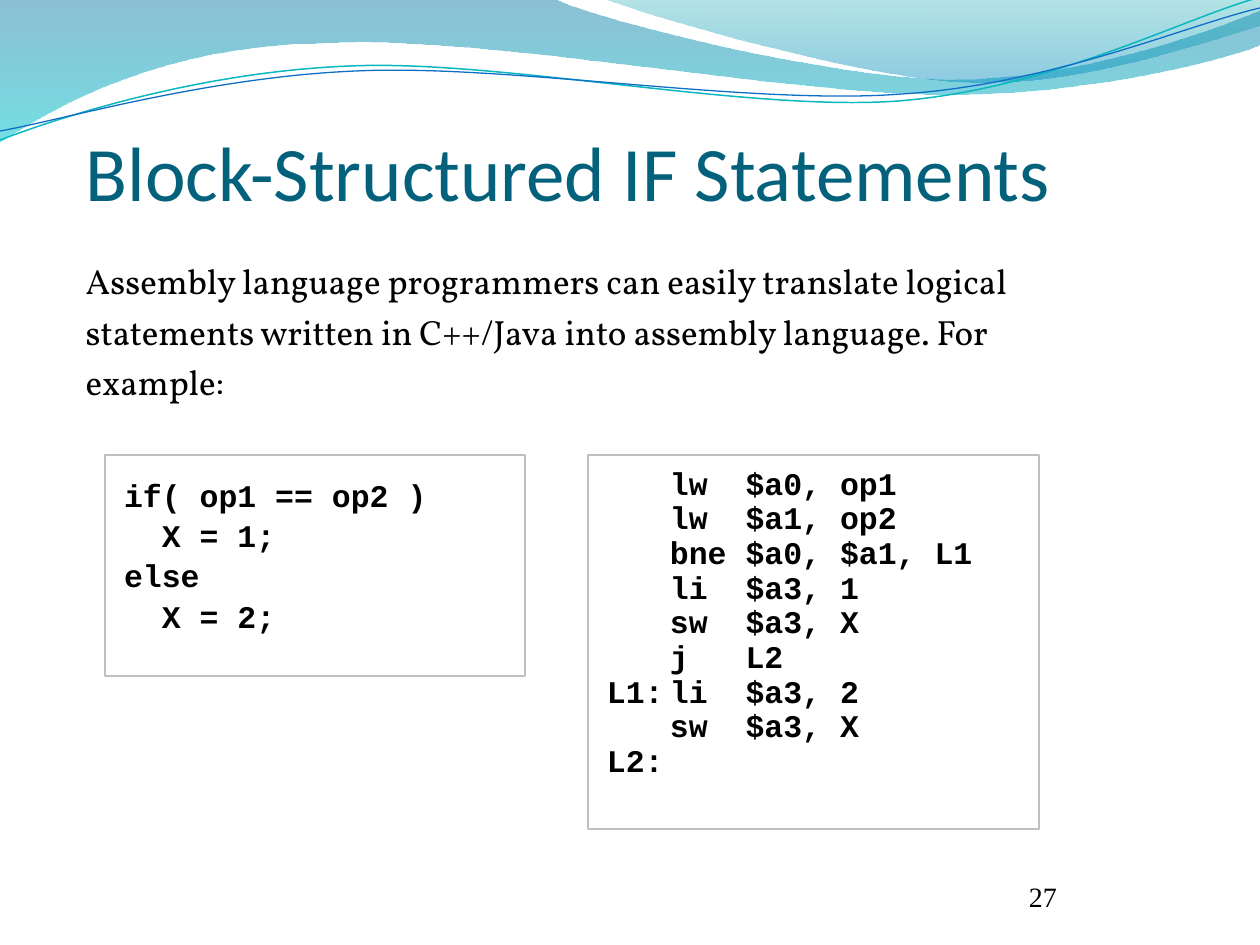
from lxml import etree
from pptx import Presentation
from pptx.dml.color import RGBColor
from pptx.enum.shapes import MSO_SHAPE
from pptx.enum.text import MSO_ANCHOR, MSO_AUTO_SIZE, PP_ALIGN
from pptx.oxml.ns import qn
from pptx.util import Emu, Pt

RECT = MSO_SHAPE.RECTANGLE
TOP, BOTTOM = MSO_ANCHOR.TOP, MSO_ANCHOR.BOTTOM
NO_FIT = MSO_AUTO_SIZE.NONE
LEFT = PP_ALIGN.LEFT

WIDTH, HEIGHT = 1260, 945
LABEL_INDENT = 63
CODE_TOP = 455

# Wave outlines: a start point, then lines (one point) and Bezier curves (three)
BROAD_WAVE = [
    [(-1, -1)],
    [(554, -1)],
    [(600, 21), (837, 79), (955, 79)],
    [(1075, 79), (1207, 33), (1260, 11)],
    [(1261, 45)],
    [(1238, 55), (1096, 96), (940, 94)],
    [(784, 94), (481, 35), (324, 43)],
    [(163, 45), (58, 105), (-1, 142)],
]
RIGHT_WAVE = [
    [(604, -1)],
    [(641, 14), (859, 78), (969, 82)],
    [(1079, 87), (1211, 40), (1260, 26)],
    [(1260, 0)],
]
TEAL_LINE = [
    [(0, 140)],
    [(60, 117), (199, 72), (349, 66)],
    [(498, 59), (747, 112), (898, 101)],
    [(1050, 89), (1182, 19), (1257, -2)],
]
BLUE_LINE = [
    [(0, 131)],
    [(59, 121), (207, 77), (357, 71)],
    [(508, 64), (752, 106), (903, 94)],
    [(1053, 84), (1184, 26), (1260, 8)],
]

IF_CODE = ["if( op1 == op2 )", "  X = 1;", "else", "  X = 2;"]
ASSEMBLY_CODE = [
    "lw  $a0, op1",
    "lw  $a1, op2",
    "bne $a0, $a1, L1",
    "li  $a3, 1",
    "sw  $a3, X",
    "j   L2",
    "L1:\tli  $a3, 2",
    "sw  $a3, X",
    "L2:",
]


def px(n):
    return Emu(round(n * 914400 / 126))


def color(hex_value):
    return RGBColor.from_string(hex_value)


def place(sp, left, top, width, height):
    sp.left, sp.top, sp.width, sp.height = map(px, (left, top, width, height))


def add_outline(slide, segments, close):
    """Build a freeform through the end points, then bend its curved segments."""
    ends = [(px(x), px(y)) for x, y in (segment[-1] for segment in segments)]
    builder = slide.shapes.build_freeform(*ends[0])
    builder.add_line_segments(ends[1:], close=close)
    sp = builder.convert_to_shape()
    sp.shadow.inherit = False
    lines = list(sp.element.spPr.iter(qn("a:lnTo")))
    for line, segment in zip(lines, segments[1:]):
        if len(segment) == 3:
            curve = etree.Element(qn("a:cubicBezTo"))
            for x, y in segment:
                pt = etree.SubElement(curve, qn("a:pt"))
                pt.set("x", str(px(x) - sp.left))
                pt.set("y", str(px(y) - sp.top))
            line.getparent().replace(line, curve)
    return sp


def add_wave(slide, segments, stops):
    """Filled wave; each stop is a colour and its opacity in percent."""
    sp = add_outline(slide, segments, True)
    sp.line.fill.background()
    sp.fill.gradient()
    sp.fill.gradient_angle = 270
    for stop, (hex_value, _) in zip(sp.fill.gradient_stops, stops):
        stop.color.rgb = color(hex_value)
    for clr, (_, opacity) in zip(sp.element.spPr.iter(qn("a:srgbClr")), stops):
        etree.SubElement(clr, qn("a:alpha")).set("val", str(opacity * 1000))


def add_wave_line(slide, segments, hex_value, width):
    sp = add_outline(slide, segments, False)
    sp.fill.background()
    sp.line.color.rgb = color(hex_value)
    sp.line.width = Pt(width)


def set_text(sp, lines, font, size, hex_value="000000", bold=False,
             anchor=TOP, spacing=1.0, before=0):
    tf = sp.text_frame
    tf.text = "\n".join(lines)
    tf.word_wrap = True
    tf.auto_size = NO_FIT
    tf.vertical_anchor = anchor
    for p in tf.paragraphs:
        p.alignment = LEFT
        p.line_spacing = spacing
        p.space_before = Pt(before)
        for r in p.runs:
            r.font.name = font
            r.font.size = Pt(size)
            r.font.bold = bold
            r.font.color.rgb = color(hex_value)
    return tf


def set_margins(tf, side, end):
    tf.margin_left = tf.margin_right = px(side)
    tf.margin_top = tf.margin_bottom = px(end)


def set_indent(p, margin, first):
    pPr = p._p.get_or_add_pPr()
    pPr.set("marL", str(px(margin)))
    pPr.set("indent", str(px(first)))
    return pPr


def add_code_box(slide, left, width, height, lines, spacing, before):
    sp = slide.shapes.add_shape(RECT, px(left), px(CODE_TOP), px(width), px(height))
    sp.shadow.inherit = False
    sp.fill.background()
    sp.line.color.rgb = color("C0C0C0")
    sp.line.width = Pt(0.75)
    tf = set_text(sp, lines, "Courier New", 18, bold=True,
                  spacing=spacing, before=before)
    set_margins(tf, 19, 25)
    return tf


def main():
    prs = Presentation()
    prs.slide_width, prs.slide_height = px(WIDTH), px(HEIGHT)
    slide = prs.slides.add_slide(prs.slide_layouts[1])

    # Wave decoration
    add_wave(slide, BROAD_WAVE, [("0074A1", 45), ("00C6CF", 55)])
    add_wave(slide, RIGHT_WAVE, [("00A1A9", 30), ("008BBF", 45)])
    add_wave_line(slide, TEAL_LINE, "0AB8BF", 0.85)
    add_wave_line(slide, BLUE_LINE, "0F6FC6", 0.75)

    # Title and introduction
    title, body = slide.placeholders
    place(title, 73, 118, 1071, 84)
    set_text(title, ["Block-Structured IF Statements"], "Calibri", 44, "04617B")
    place(body, 73, 245, 1071, 179)
    tf = set_text(body, ["Assembly language programmers can easily translate logical "
                         "statements written in C++/Java into assembly language. "
                         "For example:"], "Vollkorn", 20, spacing=1.2, before=4)
    pPr = set_indent(tf.paragraphs[0], 0, 0)
    etree.SubElement(pPr, qn("a:buNone"))

    # Code boxes; labels hang to the left of the instructions
    tf = add_code_box(slide, 588, 451, 374, ASSEMBLY_CODE, 0.5, 9)
    for p in tf.paragraphs:
        set_indent(p, LABEL_INDENT, -LABEL_INDENT if p.text.startswith("L") else 0)
    add_code_box(slide, 105, 420, 221, IF_CODE, 0.9, 3.6)

    # Slide number
    number = slide.shapes.add_textbox(px(1029), px(860), px(136), px(53))
    tf = set_text(number, ["27"], "Times New Roman", 16, anchor=BOTTOM)
    set_margins(tf, 0, 0)

    prs.save("out.pptx")


if __name__ == "__main__":
    main()
